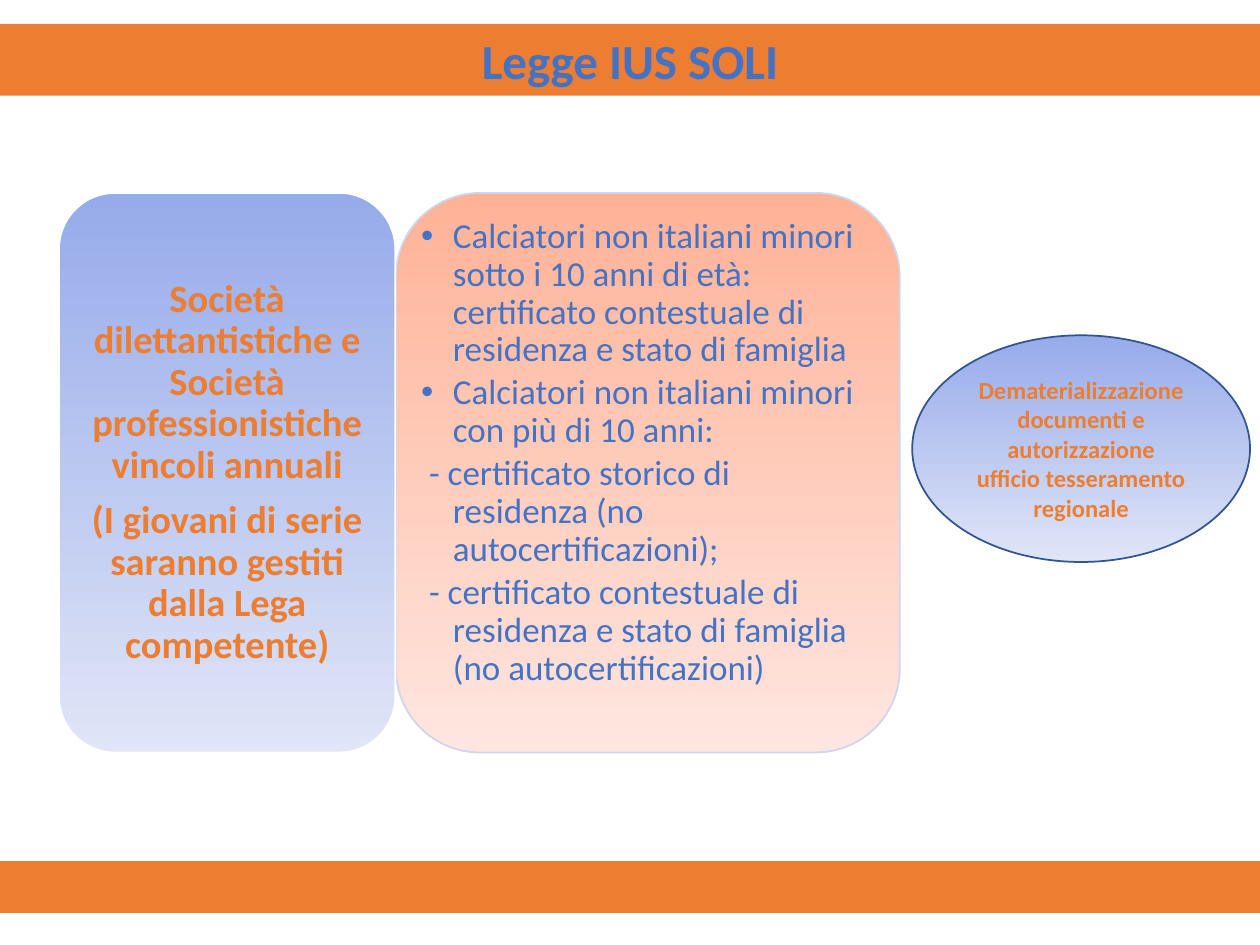
"""Build the Legge IUS SOLI slide: two panels, an oval note and orange bars."""
from dataclasses import dataclass
from typing import Optional

from lxml.etree import SubElement
from pptx import Presentation
from pptx.dml.color import RGBColor
from pptx.enum.shapes import MSO_SHAPE as Preset
from pptx.enum.text import MSO_ANCHOR as Anchor, MSO_AUTO_SIZE as AutoSize, PP_ALIGN as Align
from pptx.oxml.ns import qn
from pptx.util import Cm, Pt

COLORS = {
    "orange": "ED7D31", "blue": "4472C4", "navy": "325491", "white": "FFFFFF",
    "sky": "96ABEA", "mist": "E0E5F7", "peach": "FFB297", "blush": "FFE6E0",
    "haze": "CFD5EA",
}


@dataclass(frozen=True)
class Box:
    left: float
    top: float
    width: float
    height: float


@dataclass(frozen=True)
class TextStyle:
    size: float
    color: str
    bold: bool = True
    align: Align = Align.CENTER
    spacing: float = 1.0
    after: float = 0


@dataclass(frozen=True)
class Panel:
    preset: Preset
    box: Box
    fill: tuple[str, ...]
    line: str
    paragraphs: tuple[str, ...] = ()
    style: Optional[TextStyle] = None


@dataclass(frozen=True)
class Item:
    text: str
    bullet: Optional[str] = None
    hanging: float = 0.48


SOCIETIES = ("Società dilettantistiche e Società professionistiche vincoli annuali",
             "(I giovani di serie saranno gestiti dalla Lega competente)")
OFFICE = ("Dematerializzazione documenti e autorizzazione ufficio tesseramento regionale",)
PANELS = (
    Panel(Preset.RECTANGLE, Box(0, 17.37, 25.4, 1.02), ("orange",), "orange"),
    Panel(Preset.OVAL, Box(18.39, 6.76, 6.81, 4.57), ("sky", "mist"), "navy",
          OFFICE, TextStyle(14, "orange")),
    Panel(Preset.ROUNDED_RECTANGLE, Box(7.98, 3.89, 10.16, 11.28), ("peach", "blush"), "haze"),
    Panel(Preset.ROUNDED_RECTANGLE, Box(1.19, 3.89, 6.78, 11.28), ("sky", "mist"), "white",
          SOCIETIES, TextStyle(22, "orange", spacing=0.9, after=7.7)),
)
REQUIREMENTS = (
    Item("Calciatori non italiani minori sotto i 10 anni di età: certificato contestuale "
         "di residenza e stato di famiglia", "•", 0.64),
    Item("Calciatori non italiani minori con più di 10 anni:", "•", 0.64),
    Item("- certificato storico di residenza (no autocertificazioni);"),
    Item("- certificato contestuale di residenza e stato di famiglia (no autocertificazioni)"),
)
TITLE_STYLE = TextStyle(28, "blue")
LIST_STYLE = TextStyle(20, "blue", False, Align.LEFT, 0.9, 3)


def rgb(name: str) -> RGBColor:
    """Return the named palette colour."""
    return RGBColor.from_string(COLORS[name])


def place(shape, box: Box) -> None:
    """Move and size a shape."""
    shape.left, shape.top = Cm(box.left), Cm(box.top)
    shape.width, shape.height = Cm(box.width), Cm(box.height)


def paint(shape, fill: tuple[str, ...]) -> None:
    """Fill with one colour, or with a gradient from top to bottom."""
    if len(fill) == 1:
        shape.fill.solid()
        shape.fill.fore_color.rgb = rgb(fill[0])
        return
    shape.fill.gradient()
    shape.fill.gradient_angle = 270
    for stop, name in zip(shape.fill.gradient_stops, fill):
        stop.color.rgb = rgb(name)


def set_bullet(paragraph, item: Item) -> None:
    """Give a list paragraph its hanging indent and bullet."""
    properties = paragraph._p.get_or_add_pPr()
    properties.set("marL", str(Cm(0.64)))
    properties.set("indent", str(-Cm(item.hanging)))
    if item.bullet:
        SubElement(properties, qn("a:buChar"), char=item.bullet)
    else:
        SubElement(properties, qn("a:buNone"))


def write(frame, items: tuple[Item, ...], style: TextStyle, listed: bool = False) -> None:
    """Write one styled run in each paragraph."""
    frame.word_wrap = True
    frame.auto_size = AutoSize.NONE
    for index, item in enumerate(items):
        paragraph = frame.add_paragraph() if index else frame.paragraphs[0]
        if listed:
            set_bullet(paragraph, item)
        paragraph.alignment = style.align
        paragraph.line_spacing = style.spacing
        paragraph.space_before = Pt(0)
        paragraph.space_after = Pt(style.after)
        run = paragraph.add_run()
        run.text = item.text
        run.font.name = "Calibri"
        run.font.size = Pt(style.size)
        run.font.bold = style.bold
        run.font.color.rgb = rgb(style.color)


def draw_panel(slide, panel: Panel) -> None:
    """Draw a panel behind the placeholders."""
    box = panel.box
    shape = slide.shapes.add_shape(
        panel.preset, Cm(box.left), Cm(box.top), Cm(box.width), Cm(box.height))
    shape.shadow.inherit = False
    paint(shape, panel.fill)
    shape.line.color.rgb = rgb(panel.line)
    shape.line.width = Pt(1)
    if panel.style:
        shape.text_frame.vertical_anchor = Anchor.MIDDLE
        write(shape.text_frame, tuple(map(Item, panel.paragraphs)), panel.style)
    slide.shapes.title._element.addprevious(shape._element)


def main() -> None:
    """Build and save the slide."""
    deck = Presentation()
    deck.slide_width, deck.slide_height = Cm(25.4), Cm(19.05)
    slide = deck.slides.add_slide(deck.slide_layouts[1])
    for panel in PANELS:
        draw_panel(slide, panel)

    title = slide.shapes.title
    place(title, Box(0, 0.48, 25.4, 1.45))
    paint(title, ("orange",))
    title.text_frame.vertical_anchor = Anchor.MIDDLE
    write(title.text_frame, (Item("Legge IUS SOLI"),), TITLE_STYLE)

    requirements = slide.placeholders[1]
    place(requirements, Box(8.46, 4.37, 9.17, 10.29))
    frame = requirements.text_frame
    frame.margin_left = frame.margin_right = frame.margin_top = frame.margin_bottom = Cm(0.03)
    frame.vertical_anchor = Anchor.TOP
    write(frame, REQUIREMENTS, LIST_STYLE, listed=True)
    deck.save("out.pptx")


if __name__ == "__main__":
    main()
